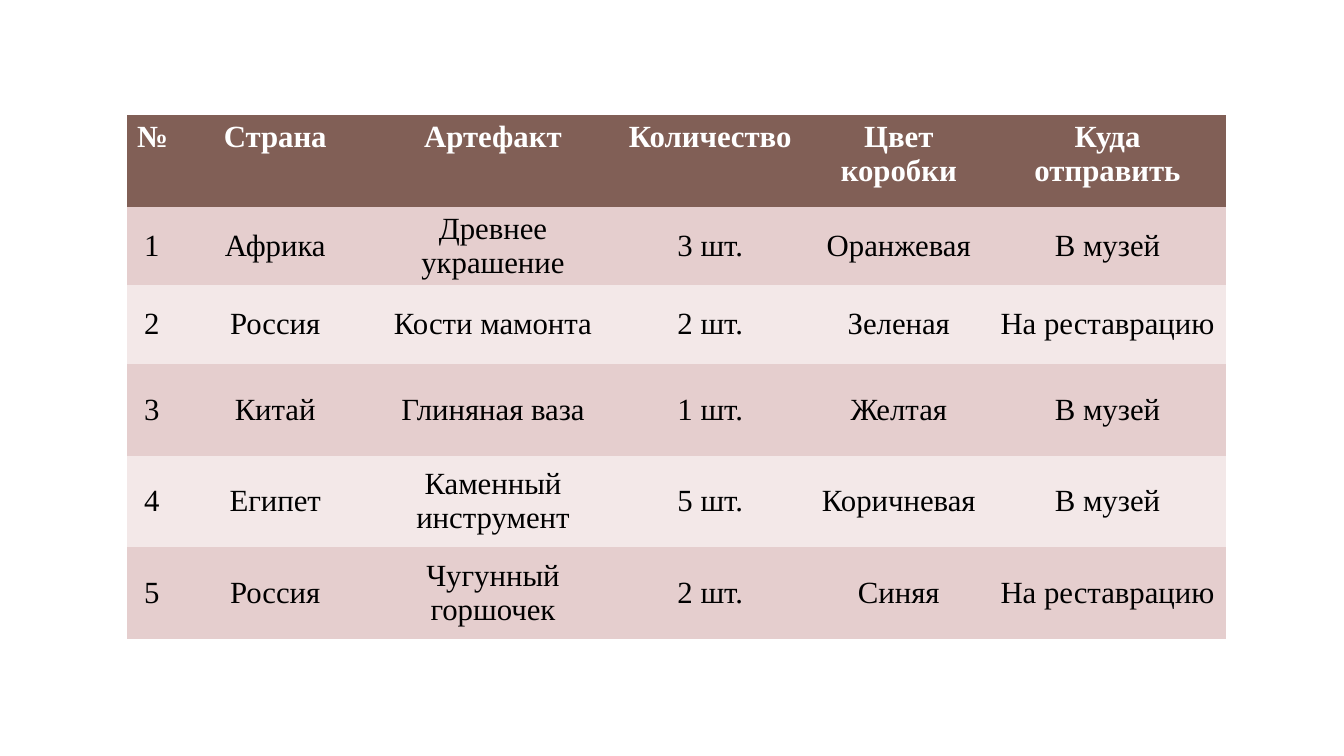
"""Build a slide with a table of artefacts and their destinations."""
from lxml.etree import SubElement
from pptx import Presentation
from pptx.dml.color import RGBColor
from pptx.enum.text import MSO_ANCHOR, PP_ALIGN
from pptx.oxml.ns import qn
from pptx.util import Inches, Pt

FONT_NAME = "Times New Roman"
FONT_SIZE = Pt(22)
WHITE = RGBColor(0xFF, 0xFF, 0xFF)
BLACK = RGBColor(0x00, 0x00, 0x00)
HEADER_FILL = RGBColor(0x81, 0x5F, 0x56)
BAND_FILLS = (RGBColor(0xE5, 0xCE, 0xCE), RGBColor(0xF3, 0xE8, 0xE8))

LEFT, TOP = 1.26, 1.14
COLUMN_WIDTHS = (0.49, 1.96, 2.36, 1.95, 1.79, 2.35)
ROW_HEIGHTS = (0.91, 0.78, 0.78, 0.91, 0.91, 0.91)

HEADER = ("№", "Страна", "Артефакт", "Количество", "Цвет коробки", "Куда отправить")
ARTEFACTS = (
    ("1", "Африка", "Древнее украшение", "3 шт.", "Оранжевая", "В музей"),
    ("2", "Россия", "Кости мамонта", "2 шт.", "Зеленая", "На реставрацию"),
    ("3", "Китай", "Глиняная ваза", "1 шт.", "Желтая", "В музей"),
    ("4", "Египет", "Каменный инструмент", "5 шт.", "Коричневая", "В музей"),
    ("5", "Россия", "Чугунный горшочек", "2 шт.", "Синяя", "На реставрацию"),
)


def clear_borders(cell):
    """Remove the lines on the four sides of a cell."""
    properties = cell._tc.get_or_add_tcPr()
    for side in ("a:lnL", "a:lnR", "a:lnT", "a:lnB"):
        line = SubElement(properties, qn(side), w="0")
        SubElement(line, qn("a:noFill"))


def fill_cell(cell, text, fill, color, bold, anchor):
    """Write centred text in a cell and colour it."""
    clear_borders(cell)
    cell.fill.solid()
    cell.fill.fore_color.rgb = fill
    cell.vertical_anchor = anchor
    cell.text_frame.text = text
    paragraph = cell.text_frame.paragraphs[0]
    paragraph.alignment = PP_ALIGN.CENTER
    font = paragraph.runs[0].font
    font.name, font.size, font.bold = FONT_NAME, FONT_SIZE, bold
    font.color.rgb = color


def fill_row(table, index, texts, *style):
    """Fill every cell of one row in the same style."""
    for column, text in enumerate(texts):
        fill_cell(table.cell(index, column), text, *style)


def add_artefact_table(slide):
    """Add the table with its header and banded rows."""
    shape = slide.shapes.add_table(
        len(ROW_HEIGHTS), len(COLUMN_WIDTHS), Inches(LEFT), Inches(TOP),
        Inches(sum(COLUMN_WIDTHS)), Inches(sum(ROW_HEIGHTS)))
    table = shape.table
    for column, width in zip(table.columns, COLUMN_WIDTHS):
        column.width = Inches(width)
    for row, height in zip(table.rows, ROW_HEIGHTS):
        row.height = Inches(height)
    fill_row(table, 0, HEADER, HEADER_FILL, WHITE, True, MSO_ANCHOR.TOP)
    for index, texts in enumerate(ARTEFACTS):
        fill = BAND_FILLS[index % 2]
        fill_row(table, index + 1, texts, fill, BLACK, False, MSO_ANCHOR.MIDDLE)


def main():
    """Create and save the presentation."""
    presentation = Presentation()
    presentation.slide_width = Inches(13.33)
    presentation.slide_height = Inches(7.5)
    slide = presentation.slides.add_slide(presentation.slide_layouts[6])
    add_artefact_table(slide)
    presentation.save("out.pptx")


if __name__ == "__main__":
    main()
